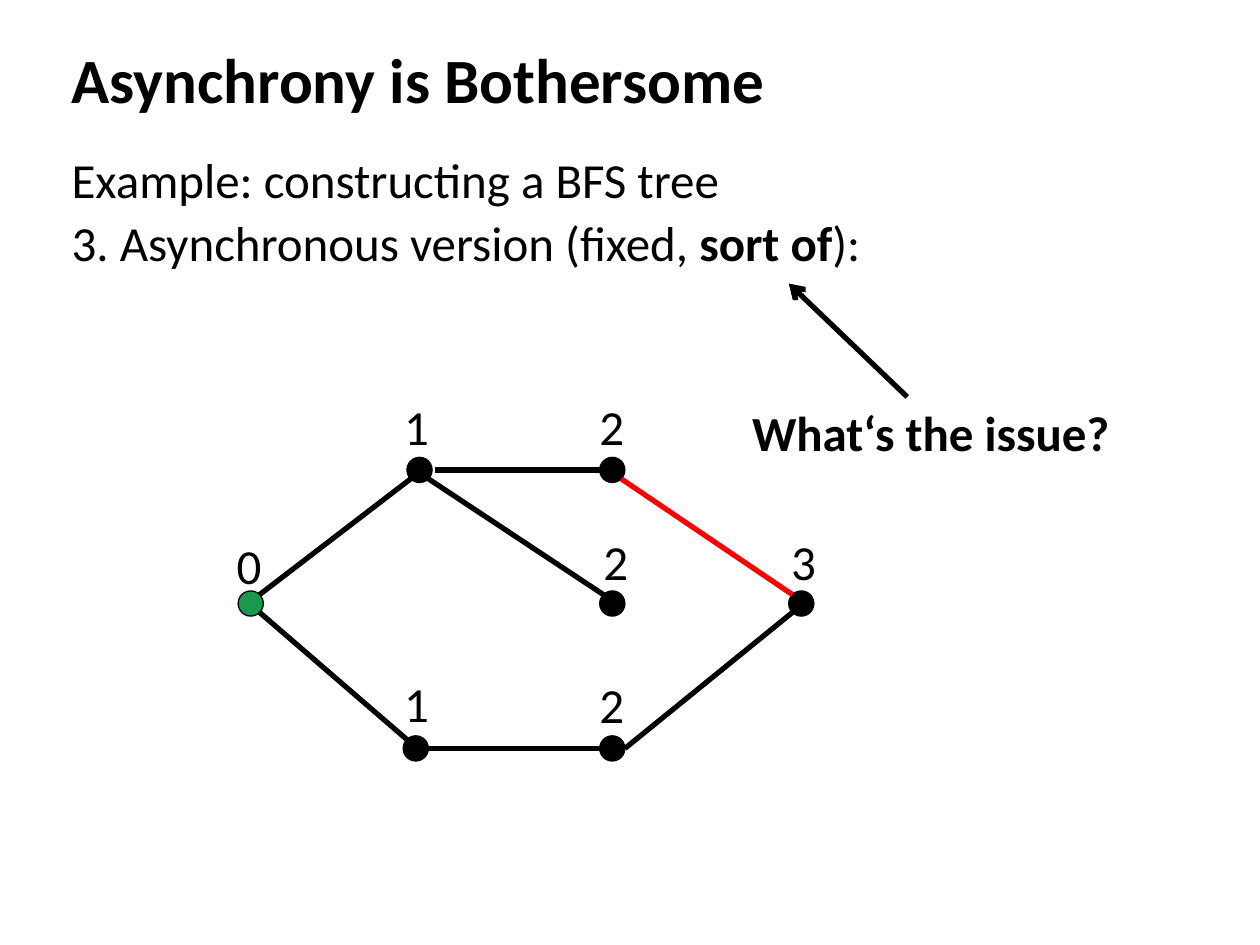
from dataclasses import dataclass

from lxml.etree import SubElement
from pptx import Presentation
from pptx.dml.color import RGBColor
from pptx.enum.shapes import MSO_CONNECTOR, MSO_SHAPE
from pptx.enum.text import MSO_ANCHOR
from pptx.oxml.ns import qn
from pptx.util import Inches, Pt


@dataclass(frozen=True)
class Theme:
    font: str = "Calibri"
    black: RGBColor = RGBColor(0x00, 0x00, 0x00)
    root: RGBColor = RGBColor(0x19, 0x99, 0x4D)
    late: RGBColor = RGBColor(0xFF, 0x00, 0x00)
    title_size: float = 36
    body_size: float = 28
    space_before: float = 5.6
    line_spacing: float = 0.9
    hanging: float = 0.56
    outline: float = 0.75
    edge: float = 3
    node: float = 0.2


def write_span(para, text, *, font, size, color, bold=False):
    span = para.add_run()
    span.text = text
    span.font.name = font
    span.font.size = Pt(size)
    span.font.color.rgb = color
    span.font.bold = bold


class SlideBuilder:
    def __init__(self, page, theme):
        self.page = page
        self.theme = theme

    def frame(self, left, top, width, height, anchor=MSO_ANCHOR.TOP):
        box = self.page.shapes.add_textbox(
            Inches(left), Inches(top), Inches(width), Inches(height))
        box.text_frame.word_wrap = True
        box.text_frame.vertical_anchor = anchor
        return box.text_frame

    def title(self, text, *bounds):
        theme = self.theme
        para = self.frame(*bounds, anchor=MSO_ANCHOR.MIDDLE).paragraphs[0]
        write_span(para, text, font=theme.font, size=theme.title_size,
                   color=theme.black, bold=True)

    def text(self, lines, *bounds):
        theme = self.theme
        frame = self.frame(*bounds)
        for index, spans in enumerate(lines):
            para = frame.add_paragraph() if index else frame.paragraphs[0]
            para.line_spacing = theme.line_spacing
            para.space_before = Pt(theme.space_before)
            properties = para._p.get_or_add_pPr()
            properties.set("marL", str(Inches(theme.hanging)))
            properties.set("indent", str(-Inches(theme.hanging)))
            for text, bold in spans:
                write_span(para, text, font=theme.font, size=theme.body_size,
                           color=theme.black, bold=bold)

    def node(self, left, top, color):
        size = Inches(self.theme.node)
        node = self.page.shapes.add_shape(
            MSO_SHAPE.OVAL, Inches(left), Inches(top), size, size)
        node.shadow.inherit = False
        node.fill.solid()
        node.fill.fore_color.rgb = color
        node.line.color.rgb = self.theme.black
        node.line.width = Pt(self.theme.outline)

    def line(self, start, end, color, arrow=False):
        line = self.page.shapes.add_connector(
            MSO_CONNECTOR.STRAIGHT, *map(Inches, start + end))
        line.line.color.rgb = color
        line.line.width = Pt(self.theme.edge)
        properties = line._element.spPr
        if arrow:
            SubElement(properties.find(qn("a:ln")), qn("a:tailEnd"), type="arrow")
        SubElement(properties, qn("a:effectLst"))


def main():
    deck = Presentation()
    deck.slide_width = Inches(10)
    deck.slide_height = Inches(7.5)
    theme = Theme()
    slide = SlideBuilder(deck.slides.add_slide(deck.slide_layouts[6]), theme)

    slide.title("Asynchrony is Bothersome", 0.47, 0.25, 9.19, 0.75)
    slide.text([
        [("Example: constructing a BFS tree", False)],
        [("3. Asynchronous version (fixed, ", False), ("sort of", True), ("):", False)],
    ], 0.47, 1.19, 8.82, 1.22)

    upper, middle, lower = 3.63, 4.69, 5.84
    slide.node(1.89, middle, theme.root)
    for left, top in [(3.23, upper), (3.2, lower), (4.76, upper),
                      (4.76, lower), (4.76, middle), (6.26, middle)]:
        slide.node(left, top, theme.black)

    tree_edges = [
        ((2.06, 4.72), (3.26, 3.8)),
        ((2.06, 4.86), (3.23, 5.87)),
        ((3.45, 3.73), (4.79, 3.73)),
        ((3.4, 3.8), (4.79, 4.72)),
        ((3.39, 5.94), (4.76, 5.94)),
        ((4.96, 5.94), (6.29, 4.86)),
    ]
    for start, end in tree_edges:
        slide.line(start, end, theme.black)
    slide.line((4.93, 3.8), (6.29, 4.72), theme.late)

    distances = [("0", 1.78, 4.25), ("1", 3.11, 5.35), ("1", 3.11, 3.15),
                 ("2", 4.66, 5.36), ("2", 4.69, 4.22), ("3", 6.18, 4.22),
                 ("2", 4.66, 3.15)]
    for distance, left, top in distances:
        slide.text([[(distance, False)]], left, top, 0.5, 0.48)

    slide.line((7.2, 3.15), (6.26, 2.25), theme.black, arrow=True)
    slide.text([[("What‘s the issue?", True)]], 5.87, 3.2, 3.08, 0.59)

    deck.save("out.pptx")


if __name__ == "__main__":
    main()
